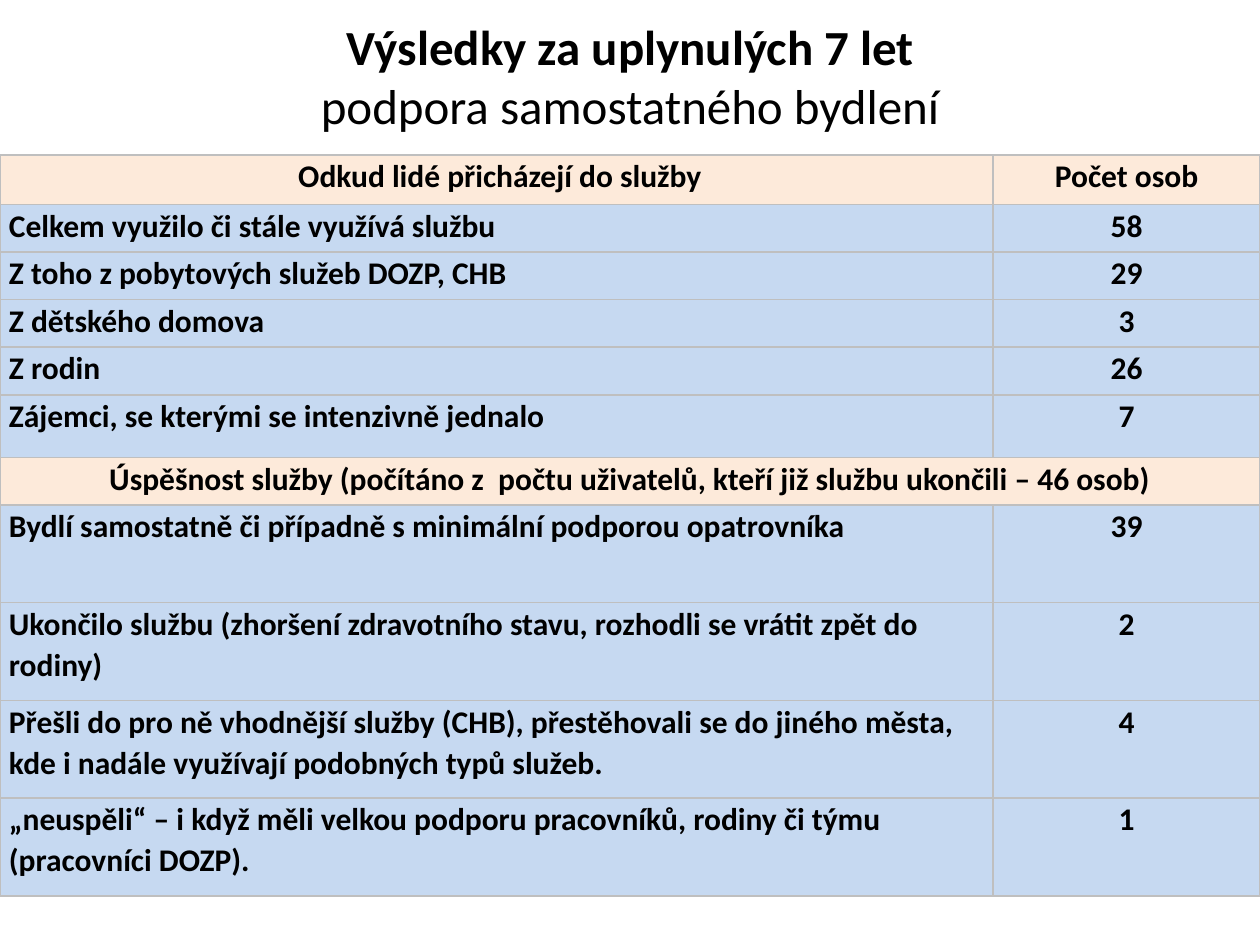
"""Build a slide with a results table for a supported housing service."""
import pptx
import pptx.dml.color
import pptx.enum.text
import pptx.oxml
import pptx.oxml.ns
import pptx.util
from pptx.util import Cm

FONT = "Calibri"
COLORS = {"text": "000000", "head": "FDEADA", "body": "C6D9F1", "line": "BFBFBF"}
ALIGN = pptx.enum.text.PP_ALIGN
ANCHOR = pptx.enum.text.MSO_ANCHOR

WIDTHS = (20.02, 5.38)
LOW, MID, TALL = 0.96, 1.26, 1.97
ROWS = [
    (1.0, " Odkud lidé přicházejí do služby", "Počet osob"),
    (LOW, "Celkem využilo či stále využívá službu", "58"),
    (LOW, "Z toho z pobytových služeb DOZP, CHB", "29"),
    (LOW, "Z dětského domova", "3"),
    (LOW, "Z rodin", "26"),
    (MID, "Zájemci, se kterými se intenzivně jednalo", "7"),
    (LOW, "Úspěšnost služby (počítáno z  počtu uživatelů, "
          "kteří již službu ukončili – 46 osob)", None),
    (TALL, "Bydlí samostatně či případně s minimální podporou opatrovníka", "39"),
    (TALL, "Ukončilo službu (zhoršení zdravotního stavu, "
           "rozhodli se vrátit zpět do rodiny)", "2"),
    (TALL, "Přešli do pro ně vhodnější služby (CHB), přestěhovali se do jiného "
           "města, kde i nadále využívají podobných typů služeb.", "4"),
    (TALL, "„neuspěli“ – i když měli velkou podporu pracovníků, rodiny či týmu "
           "(pracovníci DOZP).", "1"),
]


def rgb(name):
    return pptx.dml.color.RGBColor.from_string(COLORS[name])


def add_run(para, text, size, bold=True):
    run = para.add_run()
    run.text = text
    font = run.font
    font.name, font.size, font.bold = FONT, pptx.util.Pt(size), bold
    font.color.rgb = rgb("text")


def set_title(slide):
    title = slide.shapes.title
    title.left, title.top = Cm(1.27), Cm(0.33)
    title.width, title.height = Cm(22.86), Cm(2.39)
    frame = title.text_frame
    frame.vertical_anchor = ANCHOR.MIDDLE
    frame.auto_size = pptx.enum.text.MSO_AUTO_SIZE.NONE
    para = frame.paragraphs[0]
    para.alignment = ALIGN.CENTER
    add_run(para, "Výsledky za uplynulých 7 let", 28)
    para.add_line_break()
    add_run(para, "podpora samostatného bydlení", 28, False)


def set_edges(cell):
    props = cell._tc.get_or_add_tcPr()
    for spot, side in enumerate(("lnL", "lnR", "lnT", "lnB")):
        props.insert(spot, pptx.oxml.parse_xml(
            f'<a:{side} {pptx.oxml.ns.nsdecls("a")} w="12700"><a:solidFill>'
            f'<a:srgbClr val="{COLORS["line"]}"/></a:solidFill></a:{side}>'))


def fill_cell(cell, text, tone, align):
    cell.margin_left = cell.margin_right = Cm(0.18)
    cell.margin_top = cell.margin_bottom = 0
    cell.vertical_anchor = ANCHOR.TOP
    cell.fill.solid()
    cell.fill.fore_color.rgb = rgb(tone)
    set_edges(cell)
    if text:
        para = cell.text_frame.paragraphs[0]
        para.alignment, para.line_spacing = align, 1.07
        add_run(para, text, 18)


def add_grid(slide):
    high = sum(row[0] for row in ROWS)
    grid = slide.shapes.add_table(
        len(ROWS), len(WIDTHS), 0, Cm(3.12), Cm(sum(WIDTHS)), Cm(high)).table
    for col, width in zip(grid.columns, WIDTHS):
        col.width = Cm(width)
    for i, (height, label, count) in enumerate(ROWS):
        grid.rows[i].height = Cm(height)
        head = i == 0 or count is None
        tone = "head" if head else "body"
        fill_cell(grid.cell(i, 0), label, tone, ALIGN.CENTER if head else ALIGN.LEFT)
        fill_cell(grid.cell(i, 1), count, tone, ALIGN.CENTER)
        if count is None:
            grid.cell(i, 0).merge(grid.cell(i, 1))


def main():
    deck = pptx.Presentation()
    deck.slide_width, deck.slide_height = Cm(25.4), Cm(19.05)
    slide = deck.slides.add_slide(deck.slide_layouts[5])
    set_title(slide)
    add_grid(slide)
    deck.save("out.pptx")


if __name__ == "__main__":
    main()
